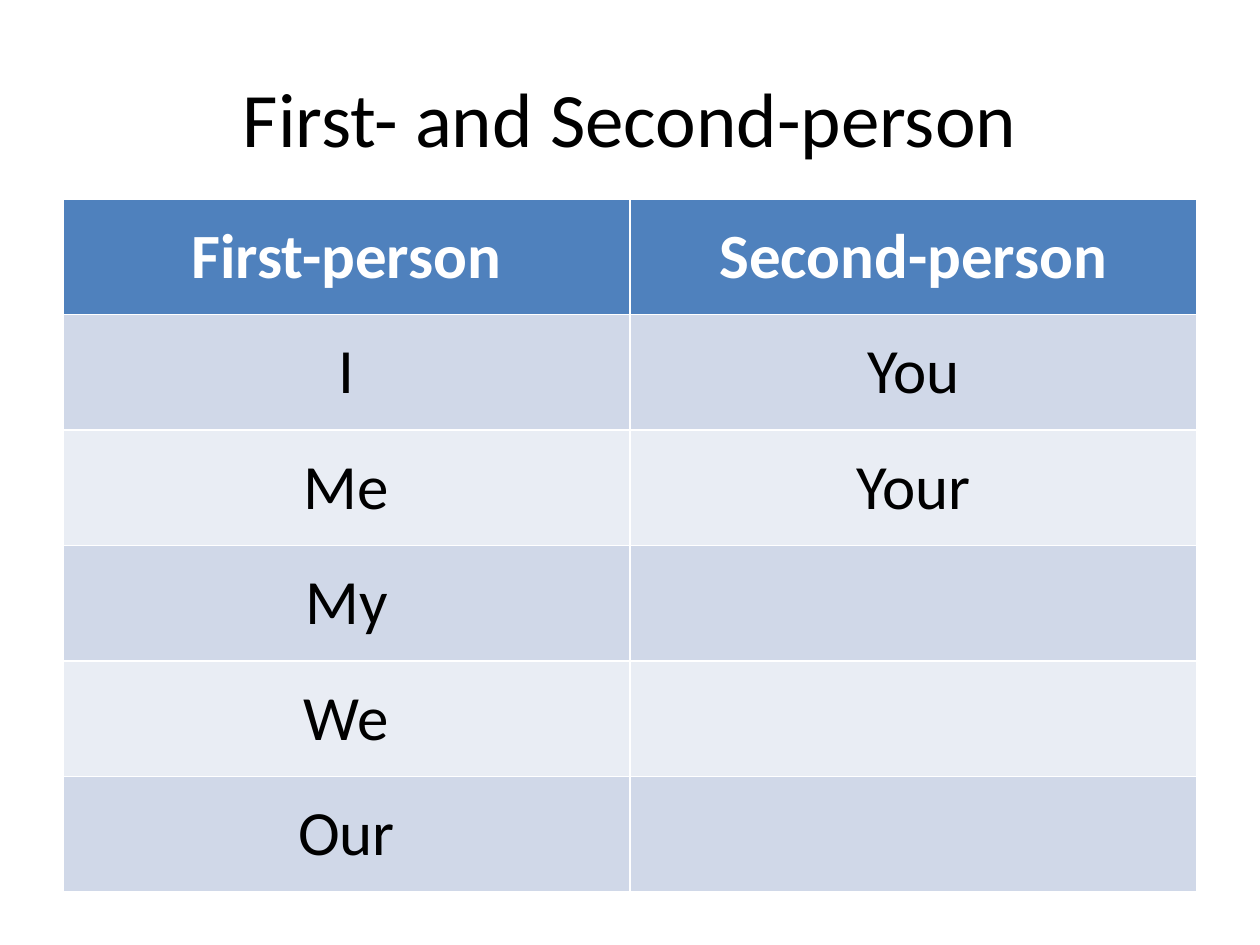
from pptx import Presentation
from pptx.dml.color import RGBColor
from pptx.enum.text import MSO_ANCHOR as Anchor, PP_ALIGN as Align
from pptx.util import Inches, Pt

ROWS = [
    ("First-person", "Second-person"),
    ("I", "You"),
    ("Me", "Your"),
    ("My", ""),
    ("We", ""),
    ("Our", ""),
]
HEAD, DARK, LIGHT = "4F81BD", "D0D8E8", "E9EDF4"


def paint(item, color):
    """Give a font or a solid fill its hex colour."""
    target = item.color if hasattr(item, "color") else item.fore_color
    target.rgb = RGBColor.from_string(color)


def write(frame, text, size, color, bold=False):
    """Set centred text and format its runs."""
    frame.text = text
    para = frame.paragraphs[0]
    para.alignment = Align.CENTER
    for run in para.runs:
        run.font.name = "Calibri"
        run.font.size = Pt(size)
        run.font.bold = bold
        paint(run.font, color)


def add_title(slide, text, left, top, width, height):
    """Place the title in its box."""
    title = slide.shapes.title
    title.left, title.top = Inches(left), Inches(top)
    title.width, title.height = Inches(width), Inches(height)
    title.text_frame.vertical_anchor = Anchor.MIDDLE
    write(title.text_frame, text, 44, "000000")


def add_grid(slide, rows, left, top, width, height):
    """Fill a box with a banded table of equal rows and columns."""
    box = [Inches(n) for n in (left, top, width, height)]
    table = slide.shapes.add_table(len(rows), len(rows[0]), *box).table
    for r, row in enumerate(rows):
        head = r == 0
        band = HEAD if head else DARK if r % 2 else LIGHT
        for c, text in enumerate(row):
            cell = table.cell(r, c)
            cell.vertical_anchor = Anchor.MIDDLE
            cell.fill.solid()
            paint(cell.fill, band)
            write(cell.text_frame, text, 36, "FFFFFF" if head else "000000", head)


def main():
    """Build and save the slide."""
    deck = Presentation()
    deck.slide_width, deck.slide_height = Inches(10), Inches(7.5)
    slide = deck.slides.add_slide(deck.slide_layouts[5])
    add_title(slide, "First- and Second-person", 0.5, 0.3, 9, 1.25)
    add_grid(slide, ROWS, 0.5, 1.58, 9, 5.5)
    deck.save("out.pptx")


if __name__ == "__main__":
    main()
